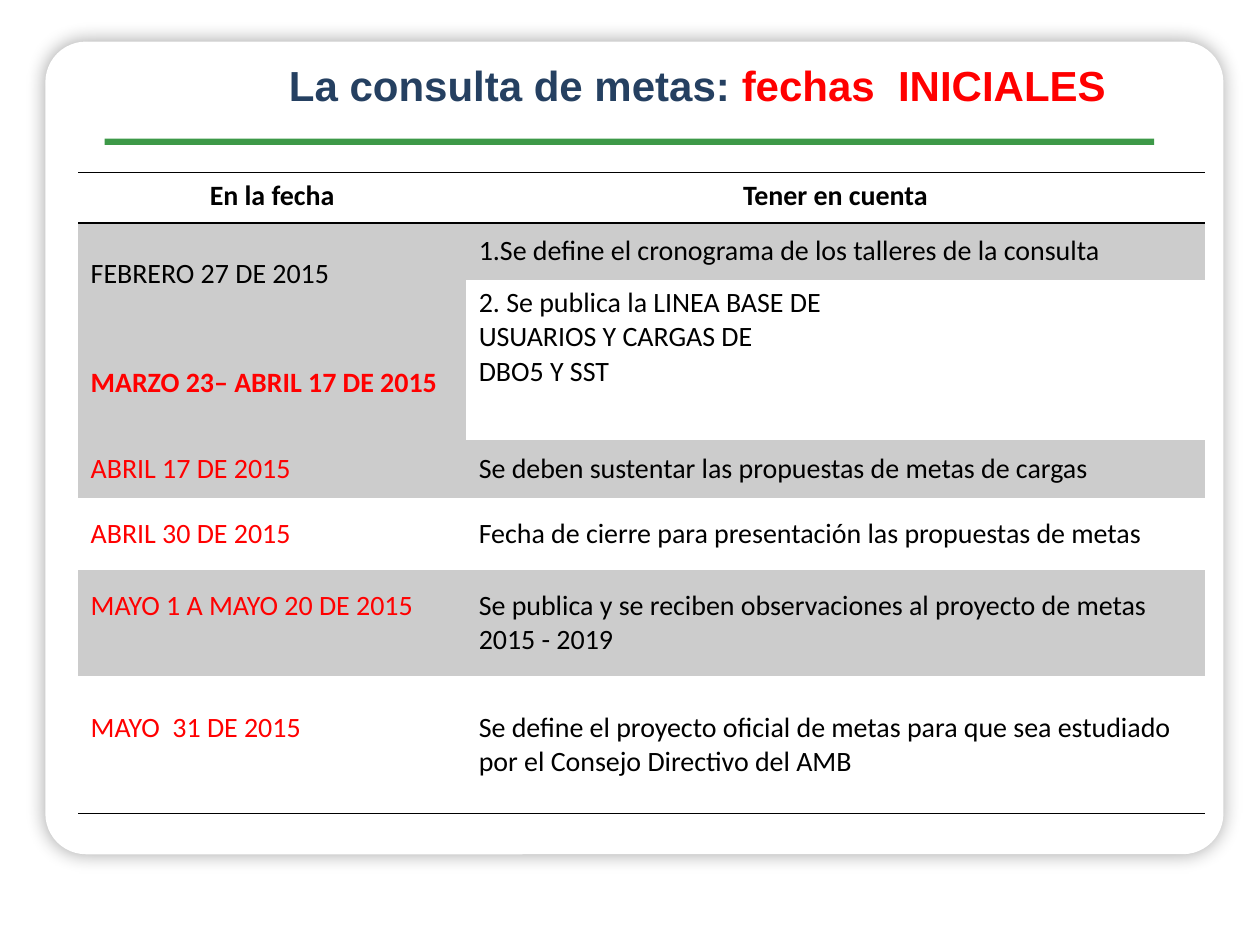
"""Build the slide with the initial dates of the targets consultation."""
import pptx
import pptx.dml.color
import pptx.enum.shapes
import pptx.enum.text
import pptx.oxml
import pptx.util
from pptx.util import Inches

NS = 'xmlns:a="http://schemas.openxmlformats.org/drawingml/2006/main"'
BLACK, RED, GREY, WHITE = "000000", "FF0000", "CCCCCC", "FFFFFF"


def rgb(value):
    return pptx.dml.color.RGBColor.from_string(value)


def add_border(cell, tag):
    cell._tc.get_or_add_tcPr().insert(0, pptx.oxml.parse_xml(
        f'<a:{tag} {NS} w="12700"><a:solidFill><a:srgbClr val="{BLACK}"/></a:solidFill></a:{tag}>'))


prs = pptx.Presentation()
prs.slide_width, prs.slide_height = Inches(10), Inches(7.5)
s = prs.slides.add_slide(prs.slide_layouts[5])

shapes = pptx.enum.shapes.MSO_SHAPE
panels = [
    (shapes.ROUNDED_RECTANGLE, 0.36, 0.33, 9.35, 6.45, WHITE),
    (shapes.RECTANGLE, 0.83, 1.1, 8.33, 0.05, "3D9948"),
]
for i, (kind, x, y, w, h, color) in enumerate(panels):
    sp = s.shapes.add_shape(kind, Inches(x), Inches(y), Inches(w), Inches(h))
    sp.shadow.inherit = False
    sp.fill.solid()
    sp.fill.fore_color.rgb = rgb(color)
    sp.line.fill.background()
    s.shapes._spTree.insert(2 + i, sp._element)
    if kind == shapes.ROUNDED_RECTANGLE:
        sp.adjustments[0] = 0.05
        sp._element.spPr.find(pptx.oxml.ns.qn("a:effectLst")).append(pptx.oxml.parse_xml(
            f'<a:outerShdw {NS} blurRad="{pptx.util.Pt(10.8)}" dist="0" dir="5400000">'
            f'<a:srgbClr val="{BLACK}"><a:alpha val="35000"/></a:srgbClr></a:outerShdw>'))

title = s.shapes.title
title.left, title.top, title.width, title.height = Inches(1.52), Inches(0.42), Inches(8.03), Inches(0.5)
tf = title.text_frame
tf.word_wrap = True
tf.auto_size = pptx.enum.text.MSO_AUTO_SIZE.NONE
tf.vertical_anchor = pptx.enum.text.MSO_ANCHOR.MIDDLE
p = tf.paragraphs[0]
p.alignment = pptx.enum.text.PP_ALIGN.CENTER
for text, color in [("La consulta de metas: ", "254061"), ("fechas  INICIALES", RED)]:
    r = p.add_run()
    r.text = text
    r.font.name, r.font.size, r.font.bold = "Arial", pptx.util.Pt(24), True
    r.font.color.rgb = rgb(color)

widths = [3.08, 2.93, 2.93]
heights = [0.4, 0.45, 0.36, 0.54, 0.36, 0.46, 0.57, 0.84, 1.09]
frame = s.shapes.add_table(len(heights), len(widths), Inches(0.62), Inches(1.37),
                           Inches(sum(widths)), Inches(sum(heights)))
table = frame.table
table.first_row = table.horz_banding = False
table._tbl.tblPr.find(pptx.oxml.ns.qn("a:tableStyleId")).text = "{2D5ABB26-0587-4C30-8999-92F81FD0307C}"
for column, w in zip(table.columns, widths):
    column.width = Inches(w)
for row, h in zip(table.rows, heights):
    row.height = Inches(h)

entries = {
    (0, 0): ("En la fecha", BLACK, True),
    (0, 1): ("Tener en cuenta", BLACK, True),
    (1, 0): ("FEBRERO 27 DE 2015", BLACK, False),
    (1, 1): ("1.Se define el cronograma de los talleres de la consulta", BLACK, False),
    (2, 1): ("2. Se publica la LINEA BASE DE USUARIOS Y CARGAS DE DBO5 Y SST", BLACK, False),
    (3, 0): ("MARZO 23– ABRIL 17 DE 2015", RED, True),
    (5, 0): ("ABRIL 17 DE 2015", RED, False),
    (5, 1): ("Se deben sustentar las propuestas de metas de cargas", BLACK, False),
    (6, 0): ("ABRIL 30 DE 2015", RED, False),
    (6, 1): ("Fecha de cierre para presentación las propuestas de metas", BLACK, False),
    (7, 0): ("MAYO 1 A MAYO 20 DE 2015", RED, False),
    (7, 1): ("Se publica y se reciben observaciones al proyecto de metas 2015 - 2019", BLACK, False),
    (8, 0): ("MAYO  31 DE 2015", RED, False),
    (8, 1): ("Se define el proyecto oficial de metas para que sea estudiado por el Consejo Directivo del AMB",
             BLACK, False),
}
grey_rows = [{1, 2, 3, 4, 5, 7}, {1, 5, 7}, {1, 5, 7}]
last = len(heights) - 1

for i in range(len(heights)):
    for j in range(len(widths)):
        cell = table.cell(i, j)
        cell.margin_left = cell.margin_right = Inches(0.1)
        cell.margin_top = cell.margin_bottom = Inches(0.05)
        if j == 0 and i in (7, 8):
            cell.margin_bottom = Inches(0.32)
        if i > 0:
            cell.vertical_anchor = pptx.enum.text.MSO_ANCHOR.MIDDLE
        if i in grey_rows[j]:
            cell.fill.solid()
            cell.fill.fore_color.rgb = rgb(GREY)
        else:
            cell.fill.background()
        if i in (0, last):
            add_border(cell, "lnB")
        if i == 0:
            add_border(cell, "lnT")
        p = cell.text_frame.paragraphs[0]
        if (i, j) not in entries:
            p._p.append(pptx.oxml.parse_xml(f'<a:endParaRPr {NS} sz="1200"/>'))
            continue
        p.text, color, bold = entries[i, j]
        if i == 0:
            p.alignment = pptx.enum.text.PP_ALIGN.CENTER
        r = p.runs[0]
        r.font.name, r.font.size, r.font.bold = "Calibri", pptx.util.Pt(16), bold
        r.font.color.rgb = rgb(color)

for i in (0, 1, 5, 6, 7, 8):
    table.cell(i, 1).merge(table.cell(i, 2))
for i, j in [(1, 0), (3, 0), (2, 1), (2, 2)]:
    table.cell(i, j).merge(table.cell(i + 1, j))

prs.save("out.pptx")
